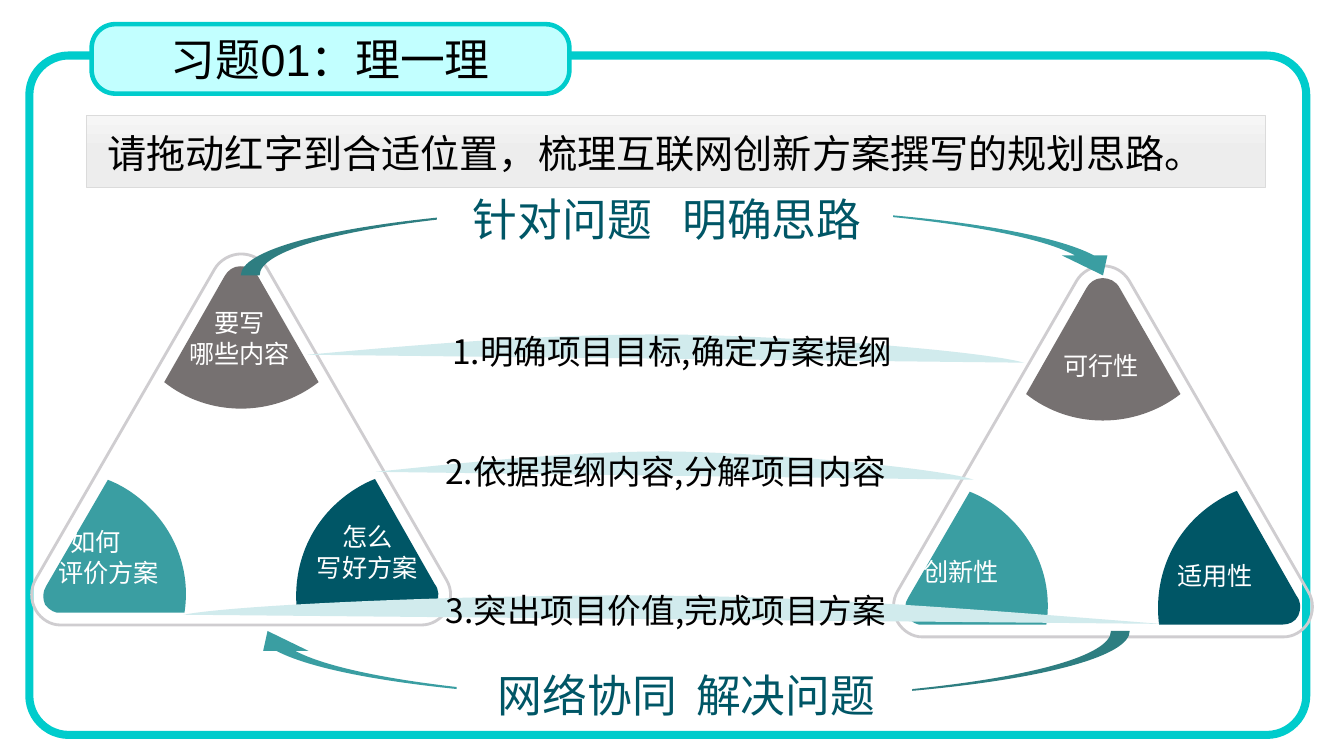
from copy import deepcopy

from lxml.etree import SubElement
from pptx import Presentation
from pptx.dml.color import RGBColor
from pptx.enum.shapes import MSO_SHAPE as Preset
from pptx.enum.text import MSO_ANCHOR as Anchor, PP_ALIGN as Align
from pptx.oxml.ns import qn
from pptx.util import Cm, Pt

BLACK = RGBColor(0x00, 0x00, 0x00)
WHITE = RGBColor(0xFF, 0xFF, 0xFF)
CYAN = RGBColor(0x00, 0xCC, 0xCC)
PALE_CYAN = RGBColor(0xC2, 0xFF, 0xFF)
TEAL = RGBColor(0x3A, 0x9E, 0xA2)
DARK_TEAL = RGBColor(0x00, 0x56, 0x66)
MIST = RGBColor(0xD1, 0xEB, 0xED)
GRAY = RGBColor(0x76, 0x71, 0x71)
FRAME_GRAY = RGBColor(0xCF, 0xCD, 0xD0)
BANNER_LINE = RGBColor(0xDB, 0xDB, 0xDB)
BANNER_STOPS = [
    (0, RGBColor(0xF6, 0xF6, 0xF6)),
    (0.5, RGBColor(0xED, 0xED, 0xED)),
    (1, RGBColor(0xEB, 0xEB, 0xEB)),
]
CHINESE_FONT = "Noto Sans CJK SC"
SECTOR_FONT = "Noto Sans CJK JP"
CURVE_STEPS = 8


def paint(shape, fill=None, line=None, width=0):
    shape.shadow.inherit = False
    if fill is None:
        shape.fill.background()
    else:
        shape.fill.solid()
        shape.fill.fore_color.rgb = fill
    if line is None:
        shape.line.fill.background()
    else:
        shape.line.color.rgb = line
        shape.line.width = Pt(width)


def write_text(shape, text, size, color, align=Align.CENTER, latin=CHINESE_FONT, chinese=CHINESE_FONT):
    frame = shape.text_frame
    frame.word_wrap = True
    frame.vertical_anchor = Anchor.MIDDLE
    frame.text = text
    for paragraph in frame.paragraphs:
        paragraph.alignment = align
        for run in paragraph.runs:
            run.font.size = Pt(size)
            run.font.color.rgb = color
            run.font.name = latin
            SubElement(run.font._element, qn("a:ea"), typeface=chinese)


presentation = Presentation()
presentation.slide_width = Cm(33.87)
presentation.slide_height = Cm(19.05)
slide = presentation.slides.add_slide(presentation.slide_layouts[6])
shapes = slide.shapes

banner = shapes.add_shape(Preset.RECTANGLE, Cm(2.18), Cm(2.92), Cm(29.72), Cm(1.8))
paint(banner, WHITE, BANNER_LINE, 0.5)
banner.fill.gradient()
banner.fill.gradient_angle = 270
stop_list = banner._element.spPr.find(qn("a:gradFill")).find(qn("a:gsLst"))
stop_list.insert(1, deepcopy(stop_list[0]))
for stop, (position, color) in zip(banner.fill.gradient_stops, BANNER_STOPS):
    stop.position = position
    stop.color.rgb = color

border = shapes.add_shape(Preset.ROUNDED_RECTANGLE, Cm(0.74), Cm(1.4), Cm(32.18), Cm(17.12))
border.adjustments[0] = 0.058
paint(border, None, CYAN, 5.75)

title = shapes.add_shape(Preset.ROUNDED_RECTANGLE, Cm(2.31), Cm(0.61), Cm(12.04), Cm(1.75))
title.adjustments[0] = 0.341
paint(title, PALE_CYAN, CYAN, 3.25)
write_text(title, "习题01：理一理", 32, BLACK, latin="Arial")

instruction = shapes.add_textbox(Cm(2.46), Cm(2.83), Cm(29.44), Cm(2.06))
write_text(instruction, "请拖动红字到合适位置，梳理互联网创新方案撰写的规划思路。", 28, BLACK, Align.LEFT)

triangle = [
    (5.41, 7.09), (0.91, 14.58),
    (0.76, 14.83, 0.76, 15.14, 0.91, 15.39),
    (1.04, 15.6, 1.27, 15.75, 1.52, 15.75),
    (10.62, 15.75),
    (10.87, 15.75, 11.1, 15.62, 11.25, 15.39),
    (11.38, 15.14, 11.4, 14.86, 11.25, 14.61),
    (6.73, 6.76),
    (6.58, 6.53, 6.35, 6.4, 6.07, 6.4),
    (5.82, 6.4, 5.54, 6.55, 5.41, 6.78),
]
triangle[0] = triangle[-1][-2:]
top_sector = [
    (6.05, 6.71),
    (5.89, 6.71, 5.74, 6.81, 5.66, 6.96),
    (4.14, 9.63),
    (5.26, 10.52, 6.88, 10.52, 8.03, 9.63),
    (6.5, 6.96),
    (6.4, 6.78, 6.25, 6.71, 6.05, 6.71),
]
left_sector = [
    (2.72, 12.09), (1.17, 14.76),
    (1.07, 14.91, 1.07, 15.09, 1.14, 15.24),
    (1.24, 15.37, 1.4, 15.47, 1.55, 15.44),
    (4.65, 15.44),
    (4.8, 14.5, 4.5, 13.51, 3.76, 12.78),
    (3.45, 12.47, 3.1, 12.24, 2.72, 12.09),
]
right_sector = [
    (9.45, 12.07),
    (9.07, 12.22, 8.69, 12.47, 8.38, 12.78),
    (7.65, 13.51, 7.37, 14.5, 7.49, 15.44),
    (10.59, 15.44),
    (10.77, 15.44, 10.92, 15.37, 11, 15.21),
    (11.07, 15.04, 11.07, 14.86, 10.95, 14.71),
    (9.45, 12.07),
]
bands = [
    [(7.75, 8.94), (10.82, 8.66, 13.89, 8.41, 16.92, 8.43), (19.91, 8.46, 24.74, 8.84, 25.81, 9.14)],
    [(9.47, 11.89), (12.04, 11.63, 14.6, 11.35, 17.09, 11.38), (19.61, 11.43, 23.65, 11.79, 24.54, 12.09)],
    [(29.24, 15.72), (25.04, 15.39, 20.88, 15.04, 16.76, 15.01), (12.67, 14.96, 6.1, 15.21, 4.62, 15.49)],
]

left_labels = [
    ("要写\n哪些内容", Align.CENTER, 0.1, 0.1, 0.2, 0),
    ("如何\n评价方案", Align.LEFT, 0.38, 0.6, 0.1, 0.3),
    ("怎么\n写好方案", Align.CENTER, 0.1, 0.38, 0.1, 0),
]
right_labels = [
    ("可行性", Align.CENTER, 0.1, 0.88, 0.2, 0),
    ("创新性", Align.LEFT, 0.46, 0.76, 0.1, 0),
    ("适用性", Align.CENTER, 0.1, 0.96, 0.8, 0),
]
sectors = [(top_sector, GRAY), (left_sector, TEAL), (right_sector, DARK_TEAL)]
outlines = []
for shift_x, shift_y, labels in [(0, 0, left_labels), (21.72, 0.3, right_labels)]:
    outlines.append((triangle, shift_x, shift_y, None, FRAME_GRAY, None))
    for (sector, color), label in zip(sectors, labels):
        outlines.append((sector, shift_x, shift_y, color, None, label))
for band in bands:
    outlines.append((band, 0, 0, MIST, None, None))

for segments, shift_x, shift_y, fill, line, label in outlines:
    moved = []
    for segment in segments:
        pairs = zip(segment[::2], segment[1::2])
        moved.append([(Cm(x + shift_x), Cm(y + shift_y)) for x, y in pairs])
    start = moved[0][0]
    points = []
    for before, after in zip(moved, moved[1:]):
        if len(after) == 1:
            points.extend(after)
            continue
        for step in range(1, CURVE_STEPS + 1):
            t = step / CURVE_STEPS
            weights = [(1 - t) ** 3, 3 * t * (1 - t) ** 2, 3 * t * t * (1 - t), t ** 3]
            corners = [before[-1], *after]
            points.append([sum(w * corner[axis] for w, corner in zip(weights, corners)) for axis in (0, 1)])
    builder = shapes.build_freeform(*start)
    builder.add_line_segments(points, close=True)
    shape = builder.convert_to_shape()
    outline = next(shape._element.iter(qn("a:path")))
    for child in list(outline):
        outline.remove(child)
    for index, segment in enumerate(moved):
        tag = "a:moveTo" if index == 0 else "a:lnTo" if len(segment) == 1 else "a:cubicBezTo"
        command = SubElement(outline, qn(tag))
        for x, y in segment:
            SubElement(command, qn("a:pt"), x=str(x - shape.left), y=str(y - shape.top))
    if fill != MIST:
        SubElement(outline, qn("a:close"))
    paint(shape, fill, line, 2)
    if label:
        text, align, left, top, right, first_offset = label
        write_text(shape, text, 18, WHITE, align, SECTOR_FONT, SECTOR_FONT)
        frame = shape.text_frame
        frame.margin_left, frame.margin_top = Cm(left), Cm(top)
        frame.margin_right, frame.margin_bottom = Cm(right), Cm(0.1)
        for paragraph in frame.paragraphs:
            paragraph.line_spacing = Pt(22)
        frame.paragraphs[0]._p.get_or_add_pPr().set("marL", str(Cm(first_offset)))

steps = [
    ("1.明确项目目标,确定方案提纲", 10.67, 8.2, 12.55),
    ("2.依据提纲内容,分解项目内容", 10.24, 11.23, 13.06),
    ("3.突出项目价值,完成项目方案", 10.01, 14.73, 13.54),
]
for text, left, top, width in steps:
    step_label = shapes.add_textbox(Cm(left), Cm(top), Cm(width), Cm(1.27))
    write_text(step_label, text, 24, BLACK)
    step_label.text_frame.margin_top = step_label.text_frame.margin_bottom = 0

headings = [
    ("针对问题\t明确思路", 6.07, 5.21, 0, 11.02, 4.75, 0.86, 5.28),
    ("网络协同\t解决问题", 6.17, 15.9, 180, 11.51, 16.74, 1, 5),
]
for text, arrow_left, arrow_top, rotation, left, top, margin, tab in headings:
    arrow = shapes.add_shape(Preset.CURVED_DOWN_ARROW, Cm(arrow_left), Cm(arrow_top), Cm(22.3), Cm(1.73))
    for index, value in enumerate([0.274, 0.661, 0.29]):
        arrow.adjustments[index] = value
    arrow.rotation = rotation
    paint(arrow, TEAL)
    heading = shapes.add_shape(Preset.ROUND_2_SAME_RECTANGLE, Cm(left), Cm(top), Cm(11.48), Cm(1.55))
    heading.adjustments[0] = 0
    heading.adjustments[1] = 0.076
    paint(heading, WHITE)
    write_text(heading, text, 32, DARK_TEAL, Align.LEFT)
    heading.text_frame.margin_left = Cm(margin)
    properties = heading.text_frame.paragraphs[0]._p.get_or_add_pPr()
    tab_list = SubElement(properties, qn("a:tabLst"))
    SubElement(tab_list, qn("a:tab"), pos=str(Cm(tab)), algn="l")

presentation.save("out.pptx")
